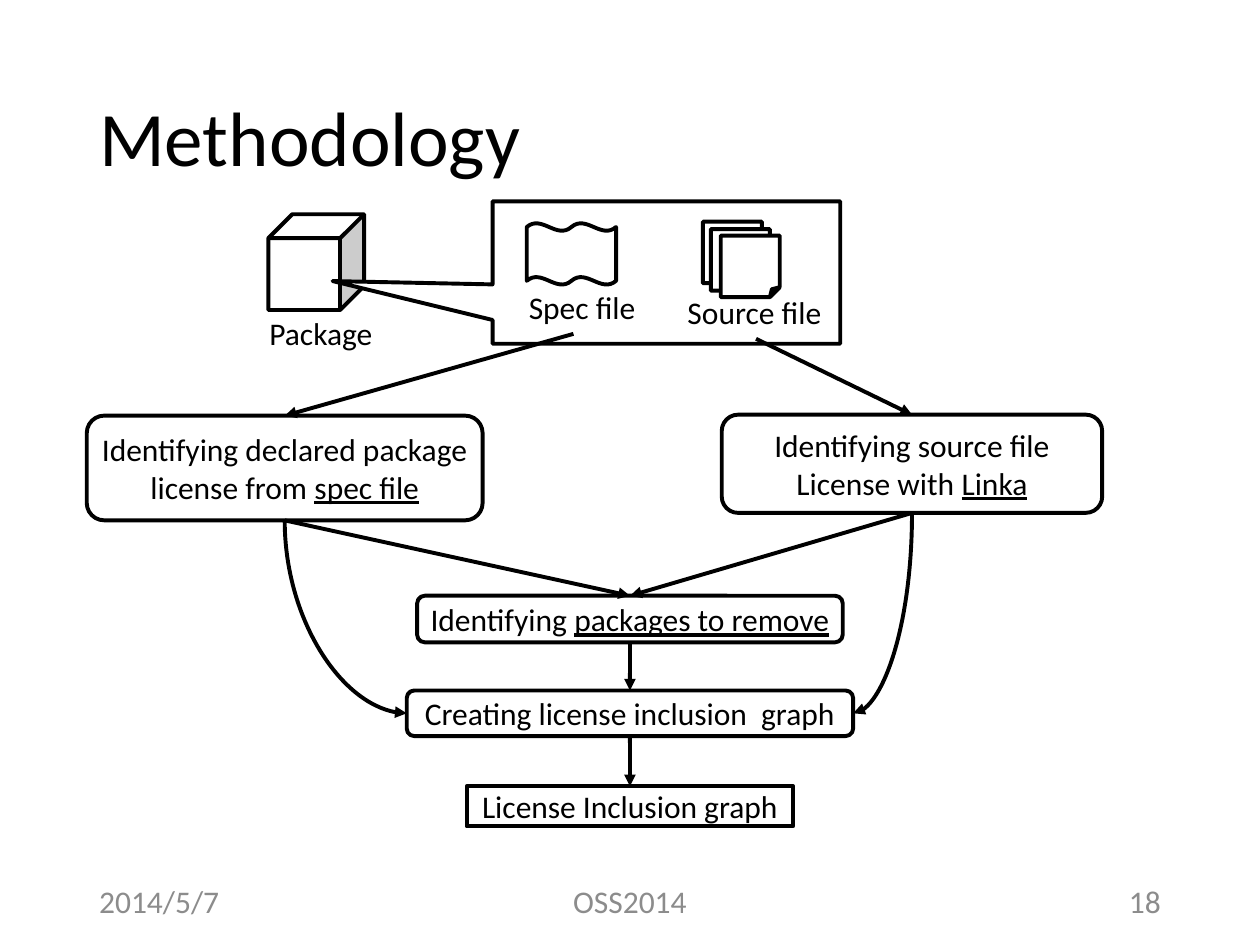
from lxml.etree import SubElement
from pptx import Presentation
from pptx.dml.color import RGBColor
from pptx.enum.shapes import MSO_CONNECTOR as Link, MSO_SHAPE as Preset
from pptx.enum.text import MSO_ANCHOR as Anchor, MSO_AUTO_SIZE as AutoSize, PP_ALIGN as Align
from pptx.oxml.ns import qn
from pptx.util import Cm, Pt

TOP, LEFT, BOTTOM, RIGHT = range(4)


def colour(hex_code):
    return RGBColor.from_string(hex_code)


class FlowSlide:
    """Draws outlined shapes, labels and arrows in one style on a slide."""

    font, size = "Calibri", 18
    ink, paper, grey = "000000", "FFFFFF", "8C8C8C"
    stroke = Pt(2.25)

    def __init__(self, page):
        self.page = page

    def add_lines(self, frame, lines, align, size=None, ink=None):
        for index, line in enumerate(lines):
            para = frame.paragraphs[0] if index == 0 else frame.add_paragraph()
            para.alignment = align
            for text, underlined in line:
                span = para.add_run()
                span.text = text
                span.font.name = self.font
                span.font.size = Pt(size or self.size)
                span.font.color.rgb = colour(ink or self.ink)
                if underlined:
                    span.font.underline = True

    def text(self, text, area, align=Align.LEFT, size=None, ink=None):
        frame = self.page.shapes.add_textbox(*map(Cm, area)).text_frame
        frame.word_wrap = True
        frame.vertical_anchor = Anchor.MIDDLE
        self.add_lines(frame, [[(text, False)]], align, size, ink)
        return frame

    def label(self, text, area):
        frame = self.text(text, area)
        frame.word_wrap = False
        frame.auto_size = AutoSize.SHAPE_TO_FIT_TEXT
        frame.vertical_anchor = Anchor.TOP

    def outline(self, preset, area):
        shape = self.page.shapes.add_shape(preset, *map(Cm, area))
        shape.shadow.inherit = False
        shape.fill.solid()
        shape.fill.fore_color.rgb = colour(self.paper)
        shape.line.color.rgb = colour(self.ink)
        shape.line.width = self.stroke
        return shape

    def step(self, lines, area, preset=Preset.ROUNDED_RECTANGLE):
        box = self.outline(preset, area)
        frame = box.text_frame
        frame.word_wrap = True
        frame.vertical_anchor = Anchor.MIDDLE
        frame.margin_left = frame.margin_right = Cm(0.18)
        frame.margin_top = frame.margin_bottom = Cm(0.1)
        self.add_lines(frame, lines, Align.CENTER)
        return box

    def style_arrow(self, arrow):
        arrow.line.color.rgb = colour(self.ink)
        arrow.line.width = self.stroke
        properties = arrow._element.spPr
        SubElement(properties.find(qn("a:ln")), qn("a:tailEnd"), type="triangle")
        SubElement(properties, qn("a:effectLst"))

    def arrow_from(self, x, y, target):
        arrow = self.page.shapes.add_connector(Link.STRAIGHT, Cm(x), Cm(y), Cm(x), Cm(y))
        arrow.end_connect(target, TOP)
        self.style_arrow(arrow)

    def arrow(self, source, target):
        arrow = self.page.shapes.add_connector(Link.STRAIGHT, 0, 0, 0, 0)
        arrow.begin_connect(source, BOTTOM)
        arrow.end_connect(target, TOP)
        self.style_arrow(arrow)

    def curve(self, source, target, side):
        start_x, start_y = source.left + source.width // 2, source.top + source.height
        end_x = target.left + (target.width if side == RIGHT else 0)
        end_y = target.top + target.height // 2
        across, down = abs(end_x - start_x), end_y - start_y
        left = (start_x + end_x - down) // 2
        top = (start_y + end_y - across) // 2
        arrow = self.page.shapes.add_connector(Link.CURVE, left, top, left + down, top + across)
        properties = arrow._element.spPr
        properties.find(qn("a:prstGeom")).set("prst", "curvedConnector2")
        frame = properties.find(qn("a:xfrm"))
        frame.set("rot", str((90 if side == RIGHT else 270) * 60000))
        if side == LEFT:
            frame.set("flipH", "1")
        self.style_arrow(arrow)


def main():
    deck = Presentation()
    deck.slide_width, deck.slide_height = Cm(25.4), Cm(19.05)
    slide = FlowSlide(deck.slides.add_slide(deck.slide_layouts[6]))

    title = slide.text("Methodology", (1.75, 1.02, 21.89, 3.68), size=44)
    title.paragraphs[0].line_spacing = 0.9
    for text, left, width, align in (
        ("2014/5/7", 1.75, 5.72, Align.LEFT),
        ("OSS2014", 8.41, 8.58, Align.CENTER),
        ("18", 17.93, 5.72, Align.RIGHT),
    ):
        slide.text(text, (left, 17.65, width, 1.02), align, ink=slide.grey)

    declared = slide.step(
        [[("Identifying declared package license from ", False), ("spec file", True)]],
        (1.75, 8.38, 7.98, 2.11),
    )
    source = slide.step(
        [[("Identifying source file", False)], [("License with ", False), ("Linka", True)]],
        (14.55, 8.36, 7.67, 1.98),
    )
    removal = slide.step(
        [[("Identifying ", False), ("packages to remove", True)]], (8.41, 12.01, 8.58, 0.94)
    )
    creation = slide.step(
        [[("Creating license inclusion  graph", False)]], (8.2, 13.92, 9, 0.92)
    )
    graph = slide.step(
        [[("License Inclusion graph", False)]], (9.41, 15.85, 6.58, 0.81), Preset.RECTANGLE
    )

    slide.outline(Preset.CUBE, (5.41, 4.32, 1.93, 1.93))
    contents = slide.outline(Preset.RECTANGULAR_CALLOUT, (9.93, 4.06, 7.01, 2.87))
    contents.adjustments[0], contents.adjustments[1] = -0.96, 0.06
    slide.outline(Preset.DOUBLE_WAVE, (10.62, 4.5, 1.8, 1.24))
    for left, top in ((14.17, 4.47), (14.33, 4.62), (14.53, 4.75)):
        slide.outline(Preset.FOLDED_CORNER, (left, top, 1.19, 1.24))
    slide.label("Package", (5.18, 6.2, 2.62, 1.02))
    slide.label("Spec file", (10.41, 5.69, 2.69, 1.02))
    slide.label("Source file", (13.61, 5.79, 3.25, 1.02))

    slide.arrow_from(11.56, 6.73, declared)
    slide.arrow_from(15.24, 6.83, source)
    for start, end in (
        (declared, removal), (source, removal), (removal, creation), (creation, graph)
    ):
        slide.arrow(start, end)
    slide.curve(declared, creation, LEFT)
    slide.curve(source, creation, RIGHT)

    deck.save("out.pptx")


if __name__ == "__main__":
    main()
